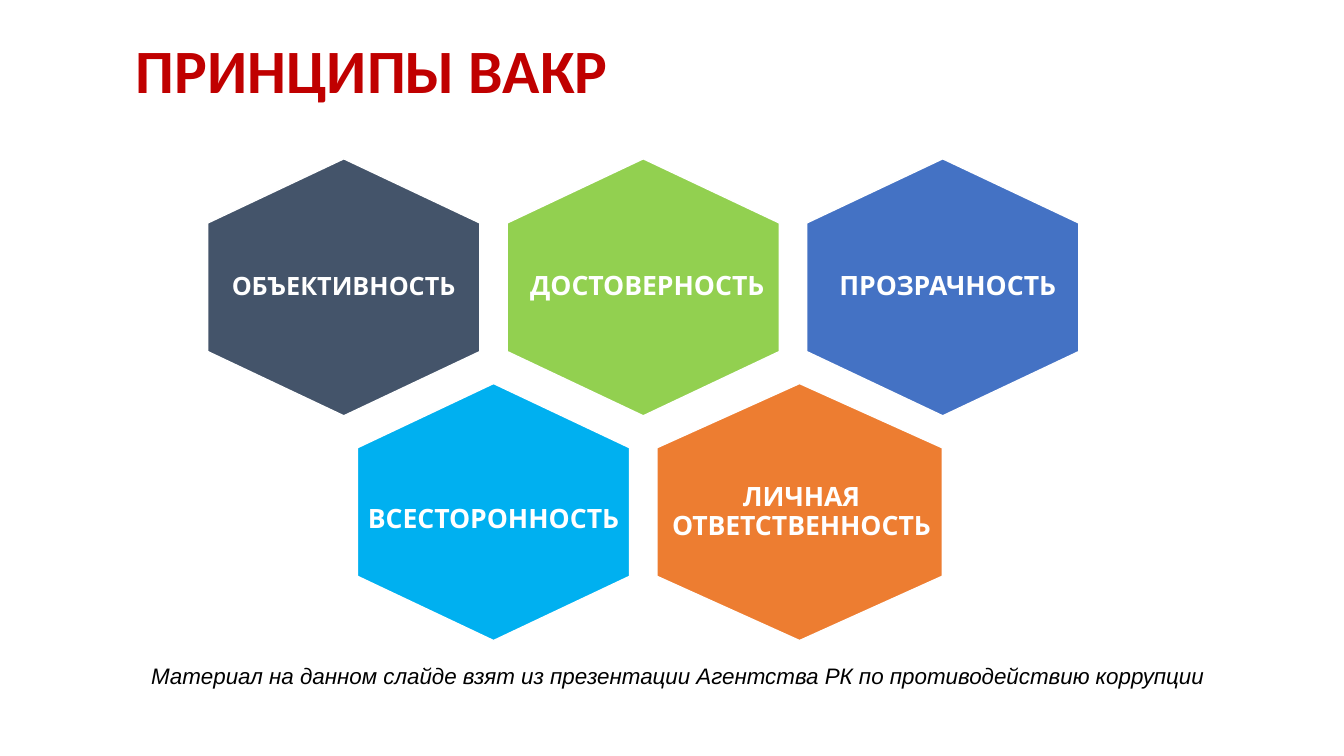
from pptx import Presentation
from pptx.dml.color import RGBColor
from pptx.enum.shapes import MSO_SHAPE
from pptx.enum.text import MSO_ANCHOR, PP_ALIGN
from pptx.util import Inches, Pt

WIDTH, HEIGHT = 13.33, 7.5

PRINCIPLES = [
    # column, row, hexagon width, label left, label top, label width, size, fill, text
]
PRINCIPLES = [
    dict(column=2, row=0, fill="4472C4", text="ПРОЗРАЧНОСТЬ", shift=(0.05, 0)),
    dict(column=1, row=0, fill="92D050", text="ДОСТОВЕРНОСТЬ", shift=(0.04, 0)),
    dict(column=1.5, row=1, fill="ED7D31", text="ЛИЧНАЯ ОТВЕТСТВЕННОСТЬ",
         extra=0.13, label=2.8, shift=(0.02, 0)),
    dict(column=0.5, row=1, fill="00B0F0", text="ВСЕСТОРОННОСТЬ", label=2.7, shift=(0, 0.08)),
    dict(column=0, row=0, fill="44546A", text="ОБЪЕКТИВНОСТЬ", size=18, label=2.4),
]


def colour(value):
    return RGBColor.from_string(value)


def add_text(page, box, text, font, align=PP_ALIGN.LEFT, anchor=MSO_ANCHOR.TOP,
             spacing=1.0, margins=(0.1, 0.05)):
    shape = page.shapes.add_textbox(*map(Inches, box))
    frame = shape.text_frame
    side, edge = map(Inches, margins)
    layout = dict(word_wrap=True, vertical_anchor=anchor, margin_left=side,
                  margin_right=side, margin_top=edge, margin_bottom=edge)
    for name, value in layout.items():
        setattr(frame, name, value)
    para = frame.paragraphs[0]
    para.alignment, para.line_spacing = align, spacing
    span = para.add_run()
    span.text = text
    formats = dict(font)
    span.font.color.rgb = colour(formats.pop("color"))
    for name, value in formats.items():
        setattr(span.font, name, value)


def add_title(page, box):
    font = dict(name="Calibri", size=Pt(44), bold=True, color="C00000")
    add_text(page, box, "ПРИНЦИПЫ ВАКР", font, anchor=MSO_ANCHOR.MIDDLE, spacing=0.9)


def add_hexagon(page, center_x, center_y, width, height, fill):
    hexagon = page.shapes.add_shape(
        MSO_SHAPE.HEXAGON, Inches(center_x - height / 2), Inches(center_y - width / 2),
        Inches(height), Inches(width))
    hexagon.rotation = 90
    hexagon.adjustments[0] = 0.25
    hexagon.shadow.inherit = False
    hexagon.fill.solid()
    hexagon.fill.fore_color.rgb = colour(fill)
    hexagon.line.color.rgb = colour("FFFFFF")
    hexagon.line.width = Pt(1)


def add_honeycomb(page, box):
    left, top, width, height = box
    cell_width, cell_height = width * 0.3125, height * 0.5335
    pitch_x, pitch_y = (width - cell_width) / 2, height - cell_height
    label_height = 1.75
    for item in PRINCIPLES:
        hexagon_width = cell_width + item.get("extra", 0)
        center_x = left + item["column"] * pitch_x + hexagon_width / 2
        center_y = top + item["row"] * pitch_y + cell_height / 2
        add_hexagon(page, center_x, center_y, hexagon_width, cell_height, item["fill"])
        label_width = item.get("label", 2.6)
        shift_x, shift_y = item.get("shift", (0, 0))
        label_box = (center_x + shift_x - label_width / 2,
                     center_y + shift_y - label_height / 2, label_width, label_height)
        font = dict(name="Cabin", size=Pt(item.get("size", 19)), bold=True, color="FFFFFF")
        add_text(page, label_box, item["text"], font, PP_ALIGN.CENTER,
                 MSO_ANCHOR.MIDDLE, 0.9, (0, 0))


def add_source_note(page, box):
    font = dict(name="Arial", size=Pt(16), italic=True, color="000000")
    add_text(page, box, "Материал на данном слайде взят из презентации "
             "Агентства РК по противодействию коррупции", font)


def main():
    deck = Presentation()
    deck.slide_width, deck.slide_height = Inches(WIDTH), Inches(HEIGHT)
    page = deck.slides.add_slide(deck.slide_layouts[6])
    add_title(page, (1.25, HEIGHT * 0.02, 11.5, 1.15))
    add_honeycomb(page, (2.06, HEIGHT * 0.21, 8.64, 4.78))
    add_source_note(page, (1.4, 6.52, 11.68, 0.37))
    deck.save("out.pptx")


if __name__ == "__main__":
    main()
